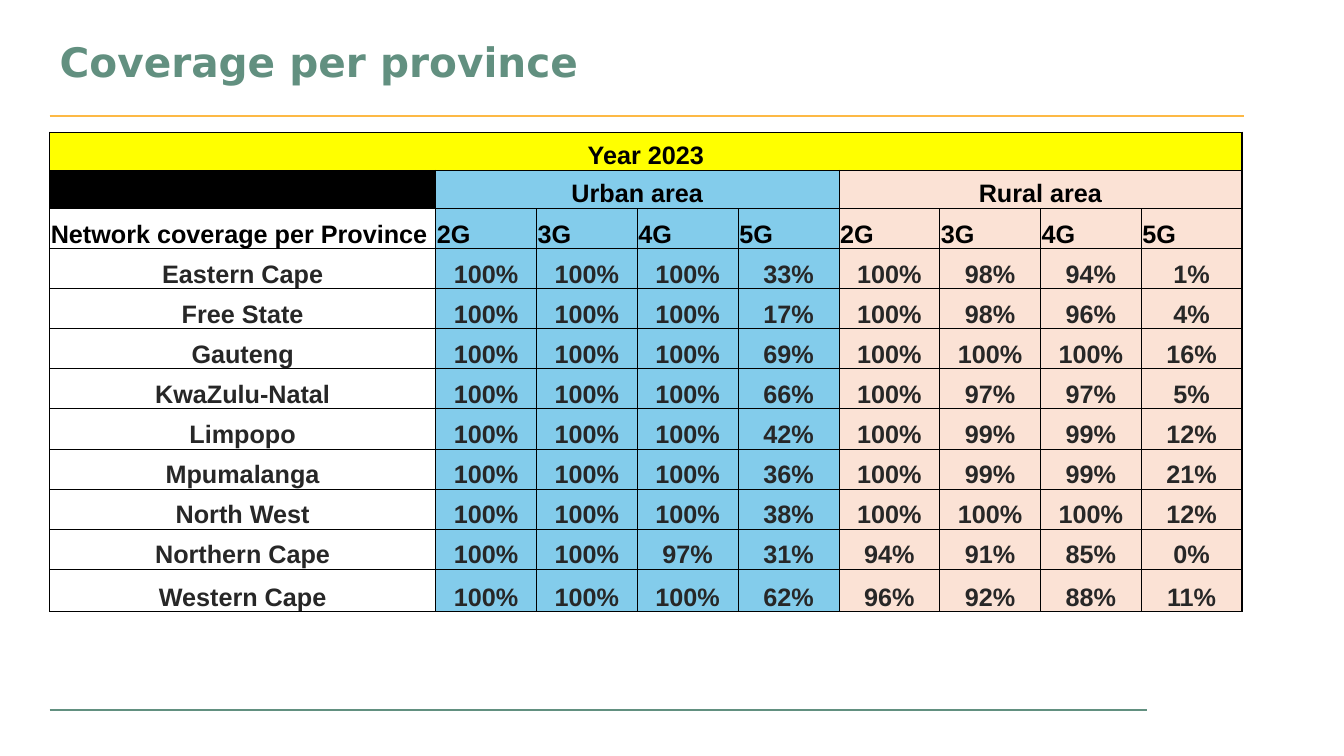
import pptx
import pptx.dml.color
import pptx.enum.shapes
import pptx.enum.text
import pptx.oxml
import pptx.oxml.ns
import pptx.util
from pptx.util import Cm

GREEN, ORANGE, YELLOW = "629080", "FDB945", "FFFF00"
BLUE, PEACH = "83CCEB", "FBE2D5"
BLACK, DARK, WHITE = "000000", "272727", "FFFFFF"
LEFT = 1.25

HEADER_ROWS = 3
NETWORKS = ["2G", "3G", "4G", "5G"]
COVERAGE = [
    ("Eastern Cape", 100, 100, 100, 33, 100, 98, 94, 1),
    ("Free State", 100, 100, 100, 17, 100, 98, 96, 4),
    ("Gauteng", 100, 100, 100, 69, 100, 100, 100, 16),
    ("KwaZulu-Natal", 100, 100, 100, 66, 100, 97, 97, 5),
    ("Limpopo", 100, 100, 100, 42, 100, 99, 99, 12),
    ("Mpumalanga", 100, 100, 100, 36, 100, 99, 99, 21),
    ("North West", 100, 100, 100, 38, 100, 100, 100, 12),
    ("Northern Cape", 100, 100, 97, 31, 94, 91, 85, 0),
    ("Western Cape", 100, 100, 100, 62, 96, 92, 88, 11),
]


def rgb(color):
    return pptx.dml.color.RGBColor.from_string(color)


def format_font(font, name, size, color):
    font.name = name
    font.size = pptx.util.Pt(size)
    font.bold = True
    font.color.rgb = rgb(color)


def add_title(s, text):
    title = s.shapes.title
    title.left, title.top = Cm(LEFT), Cm(0.81)
    title.width, title.height = Cm(29.21), Cm(1.63)
    tf = title.text_frame
    tf.text = text
    tf.auto_size = pptx.enum.text.MSO_AUTO_SIZE.NONE
    tf.vertical_anchor = pptx.enum.text.MSO_ANCHOR.MIDDLE
    p = tf.paragraphs[0]
    p.alignment = pptx.enum.text.PP_ALIGN.LEFT
    p.line_spacing = 0.9
    format_font(p.runs[0].font, "DejaVu Sans", 29, GREEN)


def add_rule(s, y, right, color):
    """Draw a horizontal line from the left margin."""
    line = s.shapes.add_connector(
        pptx.enum.shapes.MSO_CONNECTOR.STRAIGHT, Cm(LEFT), Cm(y), Cm(right), Cm(y))
    line.line.color.rgb = rgb(color)
    line.line.width = pptx.util.Pt(1.5)
    effects = pptx.oxml.parse_xml(f'<a:effectLst {pptx.oxml.ns.nsdecls("a")}/>')
    line._element.spPr.append(effects)


def set_borders(cell, widths):
    """Add black borders; widths maps the sides L, R, T and B to points."""
    tc_pr = cell._tc.get_or_add_tcPr()
    for side, width in widths.items():
        tc_pr.append(pptx.oxml.parse_xml(
            f'<a:ln{side} {pptx.oxml.ns.nsdecls("a")} w="{pptx.util.Pt(width)}">'
            f'<a:solidFill><a:srgbClr val="{BLACK}"/></a:solidFill></a:ln{side}>'))


def cell_fill(row, col):
    if row == 0:
        return YELLOW
    if col == 0:
        return BLACK if row == 1 else WHITE
    return BLUE if col <= len(NETWORKS) else PEACH


def format_cell(cell, text, color, fill, centered):
    cell.margin_left = cell.margin_right = cell.margin_top = Cm(0.03)
    cell.margin_bottom = 0
    cell.vertical_anchor = pptx.enum.text.MSO_ANCHOR.BOTTOM
    cell.fill.solid()
    cell.fill.fore_color.rgb = rgb(fill)
    p = cell.text_frame.paragraphs[0]
    p.text = text
    align = pptx.enum.text.PP_ALIGN
    p.alignment = align.CENTER if centered else align.LEFT
    for r in p.runs:
        format_font(r.font, "Arial", 18, color)


def add_coverage_table(s):
    blanks = [""] * (len(NETWORKS) - 1)
    rows = [
        ["Year 2023"] + [""] * 2 * len(NETWORKS),
        ["", "Urban area", *blanks, "Rural area", *blanks],
        ["Network coverage per Province"] + NETWORKS * 2,
    ]
    rows += [[name] + [f"{v}%" for v in values] for name, *values in COVERAGE]
    last_row, last_col = len(rows) - 1, len(rows[0]) - 1

    frame = s.shapes.add_table(
        len(rows), len(rows[0]), Cm(LEFT), Cm(3.33), Cm(30.03), Cm(12.06))
    table = frame.table
    table.first_row = table.horz_banding = False
    for i, column in enumerate(table.columns):
        column.width = Cm(2.54 if i else 9.73)
    for i, row in enumerate(table.rows):
        row.height = Cm(0.96 if i < 2 else 1.07 if i == last_row else 1.01)

    for row, first, last in [(0, 0, last_col), (1, 1, 4), (1, 5, last_col)]:
        table.cell(row, first).merge(table.cell(row, last))

    for i, texts in enumerate(rows):
        for j, text in enumerate(texts):
            cell = table.cell(i, j)
            right_edge = j + cell.span_width - 1 if cell.is_merge_origin else j
            set_borders(cell, {
                "L": 1 if j == 0 else 0.5,
                "R": 1 if right_edge == last_col else 0.5,
                "T": 1 if i == 0 else 0.5,
                "B": 1 if i == last_row else 0.5,
            })
            color = BLACK if i < HEADER_ROWS else DARK
            format_cell(cell, text, color, cell_fill(i, j), i != HEADER_ROWS - 1)


def main():
    prs = pptx.Presentation()
    prs.slide_width, prs.slide_height = Cm(33.87), Cm(19.05)
    s = prs.slides.add_slide(prs.slide_layouts.get_by_name("Title Only"))
    add_rule(s, 2.92, 31.34, ORANGE)
    add_rule(s, 17.88, 28.91, GREEN)
    add_title(s, "Coverage per province")
    add_coverage_table(s)
    prs.save("out.pptx")


if __name__ == "__main__":
    main()
